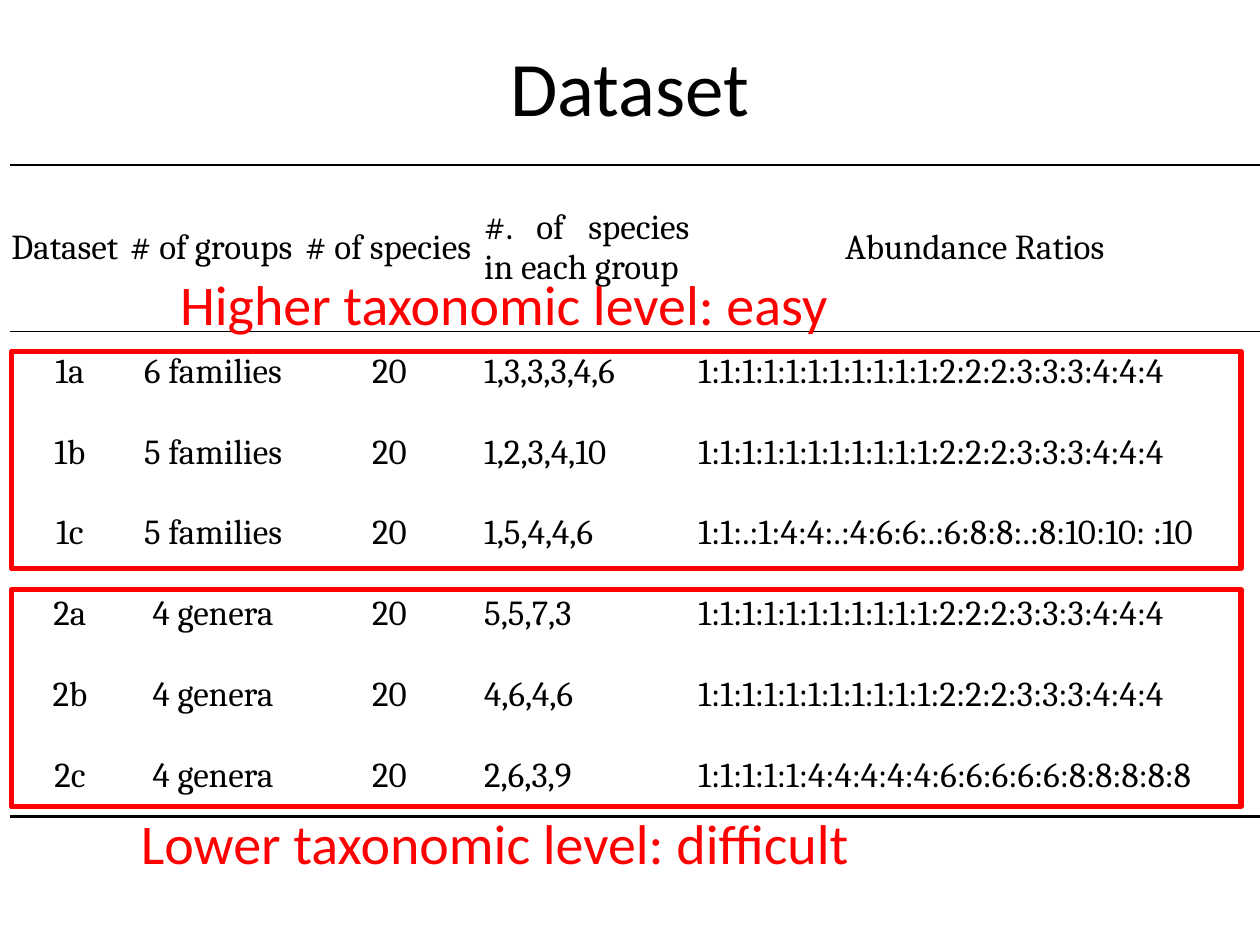
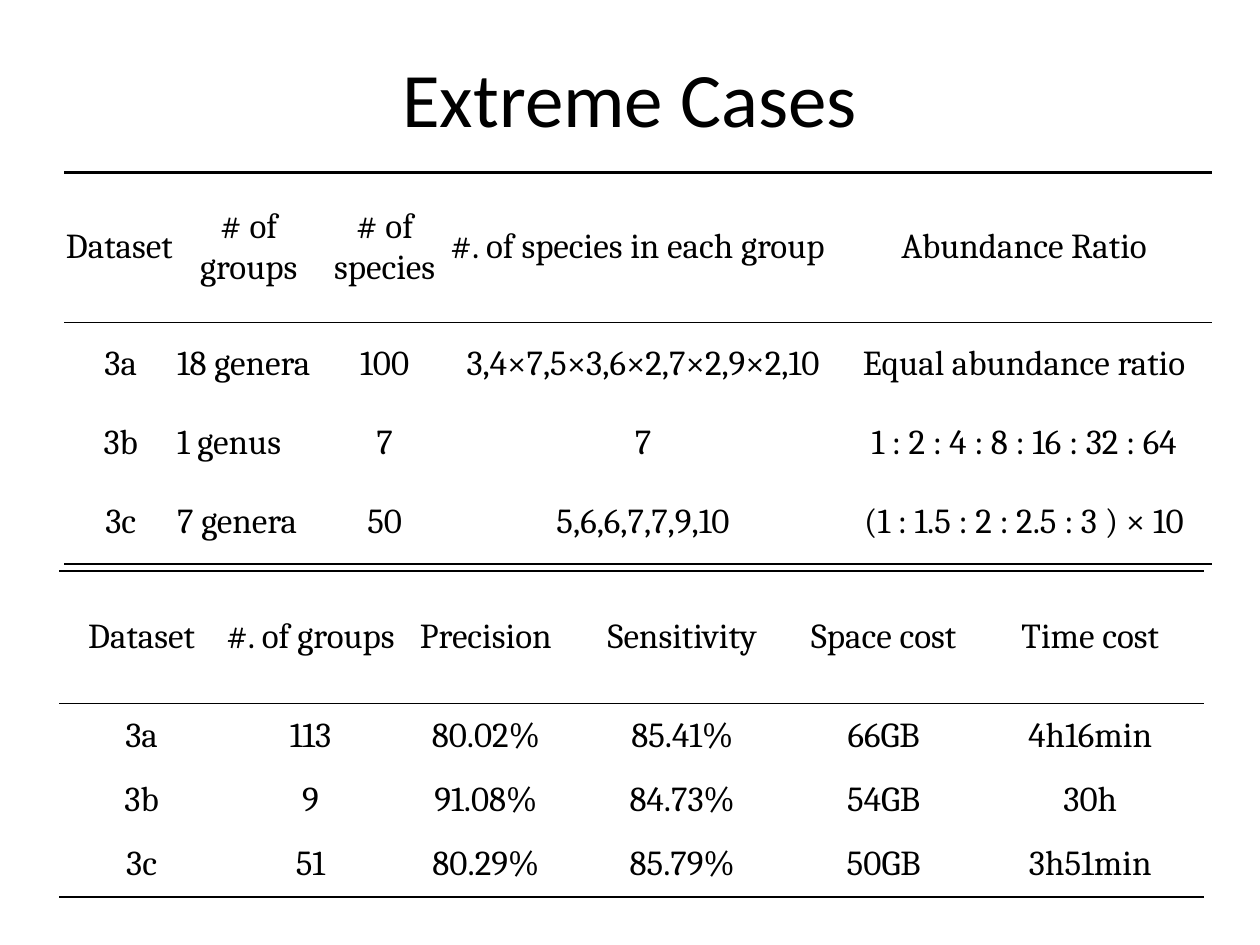
"""Build two slides that describe the test datasets and the extreme cases."""
from lxml.etree import SubElement
from pptx import Presentation
from pptx.dml.color import RGBColor
from pptx.enum.shapes import MSO_SHAPE
from pptx.enum.text import MSO_ANCHOR, MSO_AUTO_SIZE, PP_ALIGN
from pptx.oxml.ns import qn
from pptx.util import Cm, Pt

BLACK, RED = "000000", "FF0000"
ALIGN = {"l": PP_ALIGN.LEFT, "c": PP_ALIGN.CENTER, "j": PP_ALIGN.JUSTIFY}
TITLE = {"name": "Calibri", "size": Pt(44)}
CAPTION = {"name": "Calibri", "size": Pt(32)}
CELL = {"name": "Cambria", "size": Pt(20), "bold": False}
RULE, THIN_RULE = 1.5, 1
STEPPED = "1:1:1:1:1:1:1:1:1:1:1:2:2:2:3:3:3:4:4:4"

SLIDES = [
    {
        "title": "Dataset",
        "title_top": 0.13,
        "tables": [
            {
                "at": (0.2, 3.33),
                "columns": (2.39, 3.38, 3.76, 4.17, 11.5),
                "heights": (3.35,) + (1.63,) * 6,
                "head_align": "jlljc",
                "body_align": "cccjj",
                "padded": (2, 4),
                "rows": [
                    ("Dataset", "# of groups", "# of species",
                     "#. of species in each group", "Abundance Ratios"),
                    ("1a", "6 families", "20", "1,3,3,3,4,6", STEPPED),
                    ("1b", "5 families", "20", "1,2,3,4,10", STEPPED),
                    ("1c", "5 families", "20", "1,5,4,4,6",
                     "1:1:.:1:4:4:.:4:6:6:.:6:8:8:.:8:10:10: :10"),
                    ("2a", "4 genera", "20", "5,5,7,3", STEPPED),
                    ("2b", "4 genera", "20", "4,6,4,6", STEPPED),
                    ("2c", "4 genera", "20", "2,6,3,9",
                     "1:1:1:1:1:4:4:4:4:4:6:6:6:6:6:8:8:8:8:8"),
                ],
            },
        ],
        "highlights": [
            ("Higher taxonomic level: easy", (3.38, 5.31), 7.09),
            ("Lower taxonomic level: difficult", (2.59, 16.18), 11.89),
        ],
    },
    {
        "title": "Extreme Cases",
        "title_top": 0.36,
        "tables": [
            {
                "at": (1.19, 11.51),
                "columns": (3.3, 3.51, 3.56, 4.39, 3.73, 4.6),
                "heights": (2.67, 1.3, 1.3, 1.3),
                "head_align": "cccccc",
                "body_align": "cccccc",
                "padded": (3, 4, 5),
                "rows": [
                    ("Dataset", "#. of groups", "Precision", "Sensitivity",
                     "Space cost", "Time cost"),
                    ("3a", "113", "80.02%", "85.41%", "66GB", "4h16min"),
                    ("3b", "9", "91.08%", "84.73%", "54GB", "30h"),
                    ("3c", "51", "80.29%", "85.79%", "50GB", "3h51min"),
                ],
            },
            {
                "at": (1.3, 3.48),
                "columns": (2.24, 2.92, 2.59, 7.8, 7.59),
                "heights": (3.02, 1.7, 1.47, 1.7),
                "head_align": "jccjc",
                "body_align": "cjccc",
                "padded": (2, 4),
                "rows": [
                    ("Dataset", "# of groups", "# of\nspecies",
                     "#. of species in each group", "Abundance Ratio"),
                    ("3a", "18 genera", "100", "3,4×7,5×3,6×2,7×2,9×2,10",
                     "Equal abundance ratio"),
                    ("3b", "1 genus", "7", "7", "1 : 2 : 4 : 8 : 16 : 32 : 64"),
                    ("3c", "7 genera", "50", "5,6,6,7,7,9,10",
                     "(1 : 1.5 : 2 : 2.5 : 3 ) × 10"),
                ],
            },
        ],
        "highlights": [],
    },
]


def color(value):
    return RGBColor.from_string(value)


def apply(target, values):
    for name, value in values.items():
        setattr(target, name, value)


def write(text_frame, text, font, align, font_color=BLACK):
    text_frame.text = text
    for paragraph in text_frame.paragraphs:
        paragraph.alignment = ALIGN[align]
        for run in paragraph.runs:
            apply(run.font, font)
            run.font.color.rgb = color(font_color)


def add_text(shapes, box, text, font, align, font_color, frame_format):
    text_frame = shapes.add_textbox(*map(Cm, box)).text_frame
    apply(text_frame, {"word_wrap": True, **frame_format})
    write(text_frame, text, font, align, font_color)


def set_borders(cell, widths):
    properties = cell._tc.get_or_add_tcPr()
    for side in "LRTB":
        width = widths.get(side)
        line = SubElement(properties, qn(f"a:ln{side}"))
        if width:
            line.set("w", str(Pt(width)))
            fill = SubElement(line, qn("a:solidFill"))
            SubElement(fill, qn("a:srgbClr")).set("val", BLACK)
        else:
            SubElement(line, qn("a:noFill"))


def row_borders(row, last):
    if row == 0:
        return {"T": RULE, "B": THIN_RULE}
    if row == 1:
        return {"T": THIN_RULE}
    return {"B": RULE} if row == last else {}


def add_ruled_table(slide, data):
    rows, columns, heights = data["rows"], data["columns"], data["heights"]
    box = (*data["at"], sum(columns), sum(heights))
    table = slide.shapes.add_table(len(rows), len(columns), *map(Cm, box)).table
    apply(table, {"first_row": False, "horz_banding": False})
    for column, width in zip(table.columns, columns):
        column.width = Cm(width)
    for row, height in zip(table.rows, heights):
        row.height = Cm(height)
    for i, texts in enumerate(rows):
        aligns = data["body_align" if i else "head_align"]
        for j, (text, align) in enumerate(zip(texts, aligns)):
            left, right = (0.18, 0.18) if j in data["padded"] else (0.03, 0)
            cell = table.cell(i, j)
            apply(cell, {
                "margin_left": Cm(left), "margin_right": Cm(right),
                "margin_top": 0, "margin_bottom": 0,
                "vertical_anchor": MSO_ANCHOR.MIDDLE,
            })
            write(cell.text_frame, text, CELL, align)
            set_borders(cell, row_borders(i, len(rows) - 1))
            cell.fill.background()


def add_highlight(slide, caption, caption_at, frame_top):
    shapes = slide.shapes.add_group_shape().shapes
    frame_box = (0.23, frame_top, 24.79, 4.37)
    frame = shapes.add_shape(MSO_SHAPE.FLOWCHART_PROCESS, *map(Cm, frame_box))
    frame.shadow.inherit = False
    frame.fill.background()
    frame.line.color.rgb = color(RED)
    frame.line.width = Pt(3)
    add_text(shapes, (*caption_at, 19.05, 1.63), caption, CAPTION, "l", RED,
             {"auto_size": MSO_AUTO_SIZE.SHAPE_TO_FIT_TEXT})


def main():
    presentation = Presentation()
    apply(presentation, {"slide_width": Cm(25.4), "slide_height": Cm(19.05)})
    for content in SLIDES:
        slide = presentation.slides.add_slide(presentation.slide_layouts[6])
        add_text(slide.shapes, (1.27, content["title_top"], 22.86, 3.18),
                 content["title"], TITLE, "c", BLACK,
                 {"vertical_anchor": MSO_ANCHOR.MIDDLE})
        for data in content["tables"]:
            add_ruled_table(slide, data)
        for highlight in content["highlights"]:
            add_highlight(slide, *highlight)
    presentation.save("out.pptx")


if __name__ == "__main__":
    main()
